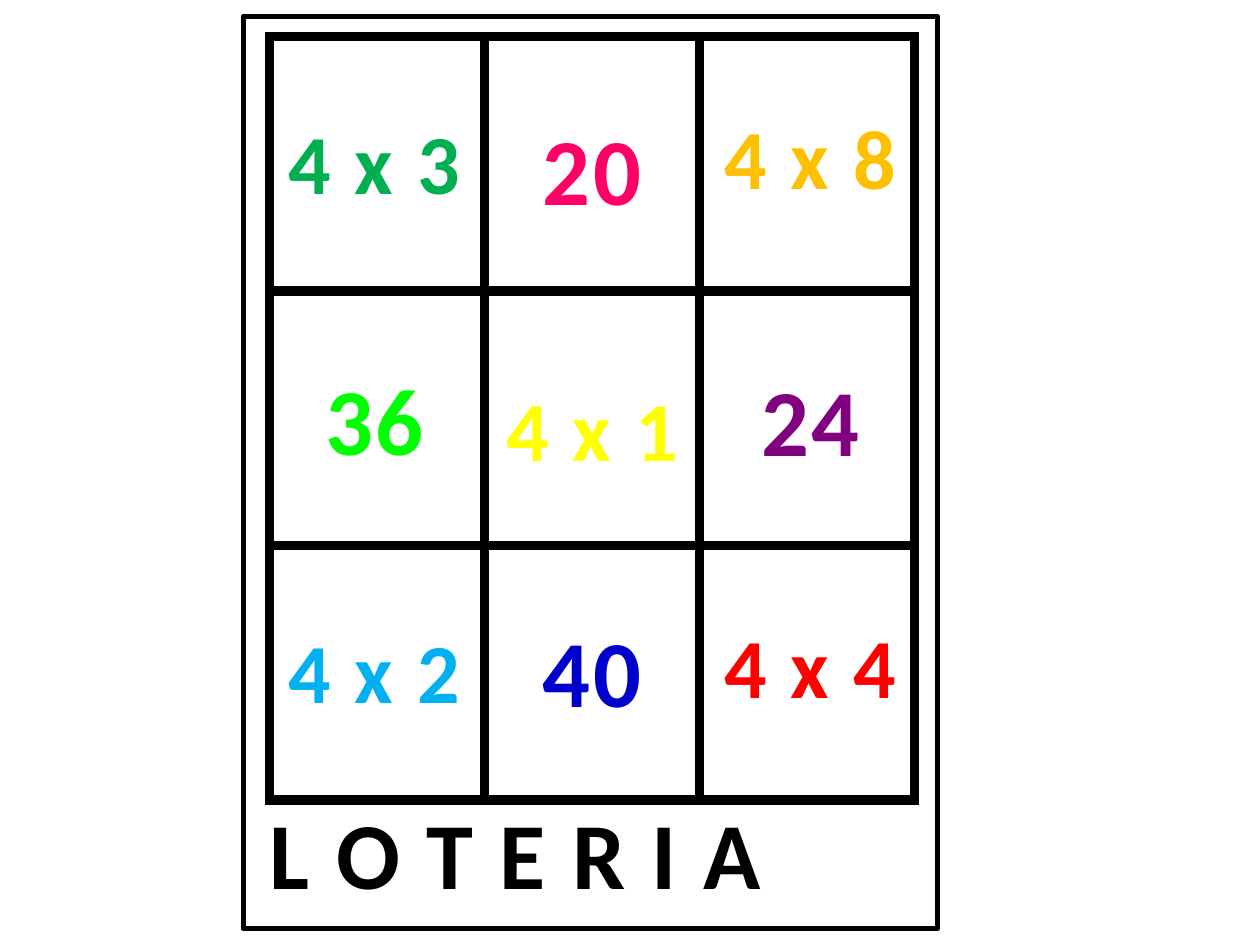
from lxml import etree
from pptx import Presentation
from pptx.dml.color import RGBColor
from pptx.enum.shapes import MSO_SHAPE
from pptx.enum.text import MSO_ANCHOR, MSO_AUTO_SIZE, PP_ALIGN
from pptx.oxml.ns import qn
from pptx.util import Inches, Pt

RECT = MSO_SHAPE.RECTANGLE
CENTER = PP_ALIGN.CENTER
TOP = MSO_ANCHOR.TOP
NO_FIT = MSO_AUTO_SIZE.NONE

COLORS = {
    "black": "000000", "green": "00B050", "pink": "FF0066", "gold": "FFC000",
    "lime": "00FF00", "yellow": "FFFF00", "purple": "800080",
    "sky": "00B0F0", "blue": "0000CC", "red": "FF0000",
}
# Each cell: text, colour, vertical offset from the middle of its row
CARD = [
    [("4 x 3", "green", -0.02), ("20", "pink", 0.04), ("4 x 8", "gold", -0.06)],
    [("36", "lime", 0), ("4 x 1", "yellow", 0.08), ("24", "purple", 0.01)],
    [("4 x 2", "sky", -0.02), ("40", "blue", -0.02), ("4 x 4", "red", -0.06)],
]
COLUMN_PITCH = 1.73


def rgb(name):
    return RGBColor.from_string(COLORS[name])


def place(sp, left, top, width, height):
    sp.left, sp.top = Inches(left), Inches(top)
    sp.width, sp.height = Inches(width), Inches(height)


def write(sp, text, color, size):
    """Put one bold, centred, slightly spaced line into a shape."""
    tf = sp.text_frame
    tf.word_wrap = False
    tf.auto_size = NO_FIT
    tf.vertical_anchor = TOP
    p = tf.paragraphs[0]
    p.alignment = CENTER
    p.line_spacing = 1.0
    p.font.name = "Calibri"
    p.font.size = Pt(size)
    p.font.bold = True
    p.font.color.rgb = rgb(color)
    r = p.add_run()
    r.text = text
    r._r.get_or_add_rPr().set("spc", "150")


def border_cell(cell, points):
    tc_pr = cell._tc.get_or_add_tcPr()
    for side in ("a:lnL", "a:lnR", "a:lnT", "a:lnB"):
        ln = etree.SubElement(tc_pr, qn(side), w=str(Pt(points)))
        fill = etree.SubElement(ln, qn("a:solidFill"))
        etree.SubElement(fill, qn("a:srgbClr"), val=COLORS["black"])
    cell.fill.background()


def add_grid(slide, left, top, width, height):
    rows, cols = len(CARD), len(CARD[0])
    table = slide.shapes.add_table(
        rows, cols, Inches(left), Inches(top), Inches(width), Inches(height)).table
    table.first_row = table.horz_banding = False
    for cell in table.iter_cells():
        border_cell(cell, 6)


def add_entries(slide, left, top, width, height):
    """Place the products and sums over the grid cells."""
    row_height = height / len(CARD)
    for row, entries in enumerate(CARD):
        for col, (text, color, dy) in enumerate(entries):
            w, h, size = (1.6, 0.91, 48) if "x" in text else (1.01, 1.01, 54)
            x = left + width / 2 + (col - 1) * COLUMN_PITCH
            y = top + (row + 0.5) * row_height + dy
            sp = slide.shapes.add_textbox(
                Inches(x - w / 2), Inches(y - h / 2), Inches(w), Inches(h))
            write(sp, text, color, size)


def add_frame(slide, left, top, width, height):
    sp = slide.shapes.add_shape(
        RECT, Inches(left), Inches(top), Inches(width), Inches(height))
    sp.shadow.inherit = False
    sp.fill.background()
    sp.line.color.rgb = rgb("black")
    sp.line.width = Pt(3)


def add_card(slide, left, top, width, height):
    """Build the lottery card: grid, title, frame and entries."""
    grid = (left + 0.21, top + 0.16, 5.12, 6.06)
    add_grid(slide, *grid)
    place(slide.shapes.title, left + 0.08, top + 6.13, 4.17, 1.01)
    write(slide.shapes.title, "L O T E R I A", "black", 54)
    add_frame(slide, left, top, width, height)
    add_entries(slide, *grid)


def main():
    prs = Presentation()
    prs.slide_width, prs.slide_height = Inches(10), Inches(7.5)
    slide = prs.slides.add_slide(prs.slide_layouts[5])
    add_card(slide, 1.93, 0.13, 5.51, 7.24)
    prs.save("out.pptx")


if __name__ == "__main__":
    main()
